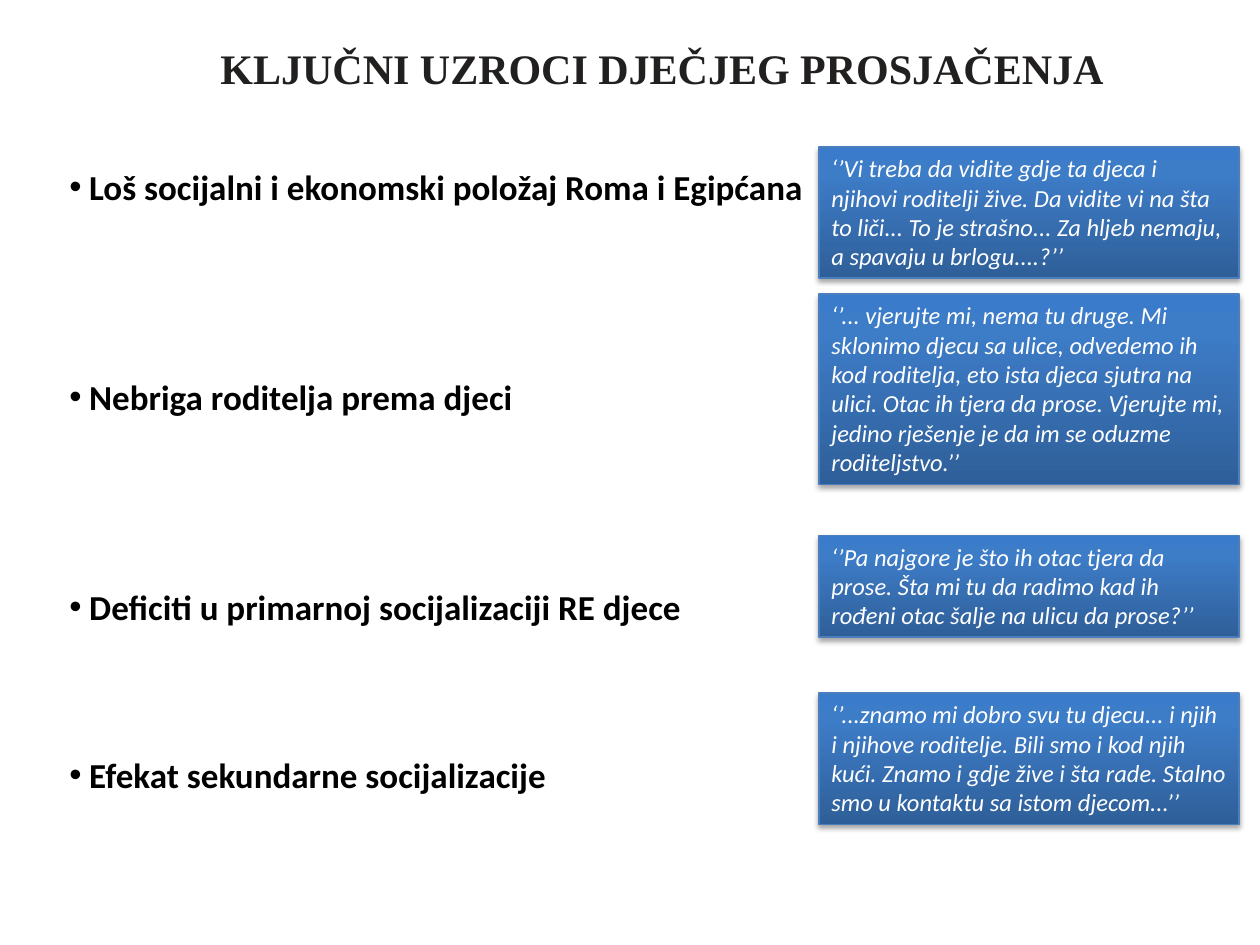
from copy import deepcopy
from dataclasses import dataclass

from lxml import etree
from pptx import Presentation
from pptx.dml.color import RGBColor
from pptx.enum import shapes, text
from pptx.oxml import ns
from pptx.util import Pt


@dataclass(frozen=True)
class Theme:
    head: str = "221F1F"
    ink: str = "000000"
    white: str = "FFFFFF"
    edge: str = "4B7EBC"
    shade: str = "000000"
    grad: tuple = ((0, "2F5F99"), (0.8, "3D7CC7"), (1, "3A7CCB"))
    serif: str = "Times New Roman"
    sans: str = "Calibri"
    big: int = 24
    mid: int = 20
    small: int = 14


def add(parent, tag, **attrs):
    return etree.SubElement(parent, ns.qn(tag), {k: str(v) for k, v in attrs.items()})


class Deck:
    def __init__(self, theme):
        self.theme = theme
        self.prs = Presentation()
        self.prs.slide_width, self.prs.slide_height = Pt(720), Pt(540)
        self.slide = self.prs.slides.add_slide(self.prs.slide_layouts[6])

    def style(self, para, face, size, color, bold=False, italic=False):
        font = para.font
        font.name, font.size = face, Pt(size)
        font.bold, font.italic = bold, italic
        font.color.rgb = RGBColor.from_string(color)

    def frame(self, x, y, w, h, inset=0):
        """Add a text box with no margins except a left inset."""
        tf = self.slide.shapes.add_textbox(Pt(x), Pt(y), Pt(w), Pt(h)).text_frame
        tf.word_wrap = True
        tf.margin_left = Pt(inset)
        tf.margin_right = tf.margin_top = tf.margin_bottom = 0
        return tf

    def title(self, words, x, y, w, h):
        para = self.frame(x, y, w, h, inset=72).paragraphs[0]
        para.text = words
        self.style(para, self.theme.serif, self.theme.big, self.theme.head, bold=True)

    def causes(self, items, x, y, w, h, pitch=24, hang=11.4):
        """Add bullets; each item is (blank lines above, words)."""
        tf = self.frame(x, y, w, h)
        for i, (gap, words) in enumerate(items):
            para = tf.add_paragraph() if i else tf.paragraphs[0]
            para.text = words
            para.line_spacing = Pt(pitch)
            para.space_before = Pt(gap * pitch)
            props = para._p.get_or_add_pPr()
            props.set("marL", str(Pt(hang)))
            props.set("indent", str(-Pt(hang)))
            add(props, "a:buFont", typeface="Arial")
            add(props, "a:buChar", char="•")
            self.style(para, self.theme.sans, self.theme.mid, self.theme.ink, bold=True)

    def quote(self, words, x, y, w, h):
        box = self.slide.shapes.add_shape(
            shapes.MSO_SHAPE.RECTANGLE, Pt(x), Pt(y), Pt(w), Pt(h))
        self.blend(box.fill)
        box.line.color.rgb = RGBColor.from_string(self.theme.edge)
        box.line.width = Pt(0.75)
        self.shadow(box)
        tf = box.text_frame
        tf.word_wrap = True
        tf.vertical_anchor = text.MSO_ANCHOR.TOP
        para = tf.paragraphs[0]
        para.text = words
        para.alignment = text.PP_ALIGN.LEFT
        self.style(para, self.theme.sans, self.theme.small, self.theme.white, italic=True)

    def blend(self, fill):
        fill.gradient()
        fill.gradient_angle = 90
        last = fill.gradient_stops[-1]._gs
        last.addnext(deepcopy(last))
        for stop, (pos, color) in zip(fill.gradient_stops, self.theme.grad):
            stop.position = pos
            stop.color.rgb = RGBColor.from_string(color)

    def shadow(self, box):
        box.shadow.inherit = False
        effects = box._element.spPr.find(ns.qn("a:effectLst"))
        outer = add(effects, "a:outerShdw", blurRad=Pt(3.1), dist=Pt(1.8),
                    dir=90 * 60000, rotWithShape=0)
        add(add(outer, "a:srgbClr", val=self.theme.shade), "a:alpha", val=35000)


CAUSES = [
    (0, "Loš socijalni i ekonomski položaj Roma i Egipćana"),
    (4, "Nebriga roditelja prema djeci"),
    (4, "Deficiti u primarnoj socijalizaciji RE djece"),
    (3, "Efekat sekundarne socijalizacije"),
]
# Top, height, words
QUOTES = [
    (84, 75, "‘’Vi treba da vidite gdje ta djeca i njihovi roditelji žive. "
     "Da vidite vi na šta to liči... To je strašno... Za hljeb nemaju, "
     "a spavaju u brlogu....?’’"),
    (168, 109, "‘’... vjerujte mi, nema tu druge. Mi sklonimo djecu sa ulice, "
     "odvedemo ih kod roditelja, eto ista djeca sjutra na ulici. Otac ih tjera "
     "da prose. Vjerujte mi, jedino rješenje je da im se oduzme roditeljstvo.’’"),
    (306, 58, "‘’Pa najgore je što ih otac tjera da prose. Šta mi tu da radimo "
     "kad ih rođeni otac šalje na ulicu da prose?’’"),
    (396, 75, "‘’...znamo mi dobro svu tu djecu... i njih i njihove roditelje. "
     "Bili smo i kod njih kući. Znamo i gdje žive i šta rade. "
     "Stalno smo u kontaktu sa istom djecom...’’"),
]


def main():
    deck = Deck(Theme())
    deck.title("KLJUČNI UZROCI DJEČJEG PROSJAČENJA", 54, 24, 606, 29)
    deck.causes(CAUSES, 39.6, 94.5, 435, 436)
    for top, high, words in QUOTES:
        deck.quote(words, 468, top, 240, high)
    deck.prs.save("out.pptx")


if __name__ == "__main__":
    main()
